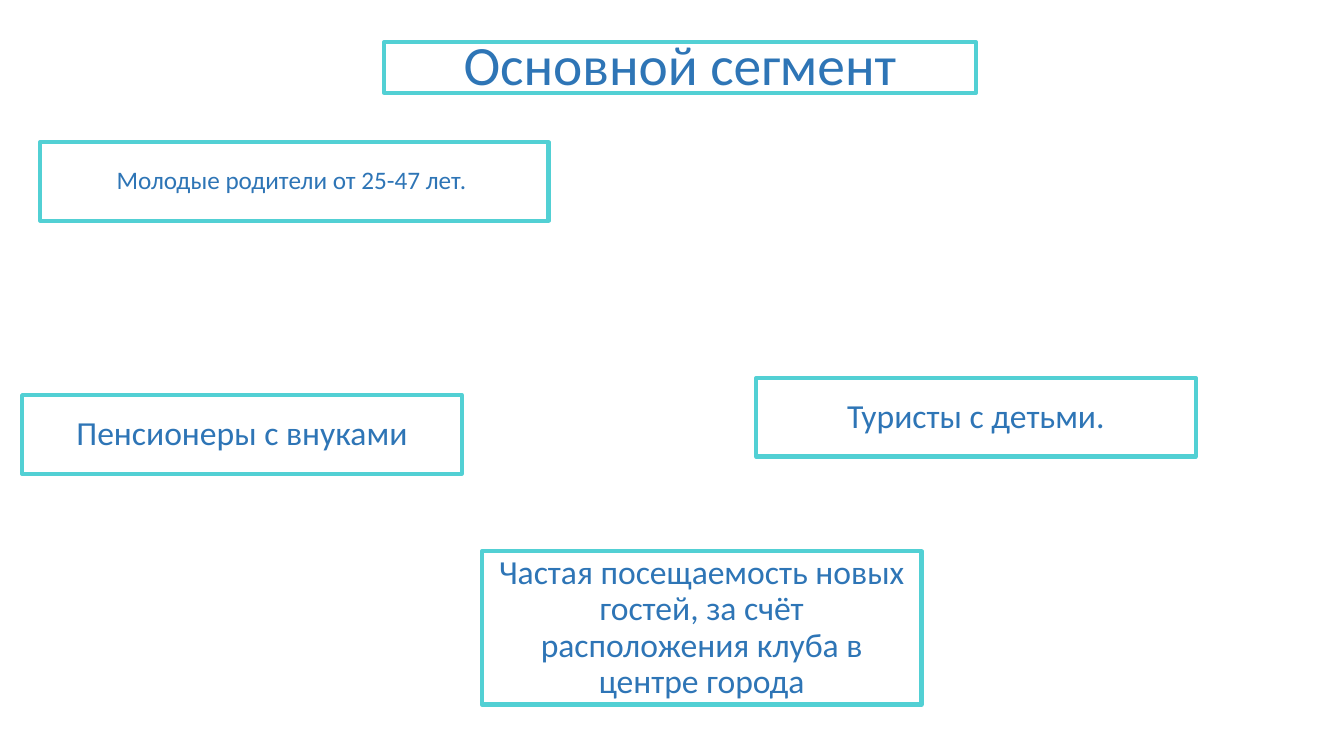
from pptx import Presentation
from pptx.dml.color import RGBColor
from pptx.enum.shapes import MSO_SHAPE
from pptx.enum.text import MSO_ANCHOR, MSO_AUTO_SIZE, PP_ALIGN
from pptx.util import Inches, Pt

COLORS = {"fill": "FFFFFF", "border": "52D0D4", "text": "2E75B6"}
CARD_WIDTH, CARD_HEIGHT = 4.36, 0.78


def style_box(box, text, size):
    box.fill.solid()
    box.fill.fore_color.rgb = RGBColor.from_string(COLORS["fill"])
    box.line.color.rgb = RGBColor.from_string(COLORS["border"])
    box.line.width = Pt(3)
    frame = box.text_frame
    frame.word_wrap = True
    frame.auto_size = MSO_AUTO_SIZE.NONE
    frame.vertical_anchor = MSO_ANCHOR.MIDDLE
    para = frame.paragraphs[0]
    para.alignment = PP_ALIGN.CENTER
    para.line_spacing = 0.9
    para.space_before = Pt(0)
    span = para.add_run()
    span.text = text
    span.font.name = "Calibri"
    span.font.size = Pt(size)
    span.font.color.rgb = RGBColor.from_string(COLORS["text"])


deck = Presentation()
deck.slide_width, deck.slide_height = Inches(13.33), Inches(7.5)
page = deck.slides.add_slide(deck.slide_layouts[5])

title = page.shapes.title
title.left, title.top = Inches(3.81), Inches(0.42)
title.width, title.height = Inches(5.87), Inches(0.5)
style_box(title, "Основной сегмент", 39.6)

segments = [
    (7.5, 3.75, CARD_WIDTH, CARD_HEIGHT, 24, "Туристы с детьми."),
    (0.4, 1.41, 5.04, CARD_HEIGHT, 18, "Молодые родители от 25-47 лет. "),
    (0.22, 3.92, CARD_WIDTH, CARD_HEIGHT, 24, "Пенсионеры с внуками"),
    (4.78, 5.47, CARD_WIDTH, 1.52, 24,
     "Частая посещаемость новых гостей, за счёт расположения клуба в центре города"),
]
for left, top, width, height, size, text in segments:
    card = page.shapes.add_shape(
        MSO_SHAPE.RECTANGLE, Inches(left), Inches(top), Inches(width), Inches(height))
    card.shadow.inherit = False
    style_box(card, text, size)

deck.save("out.pptx")
